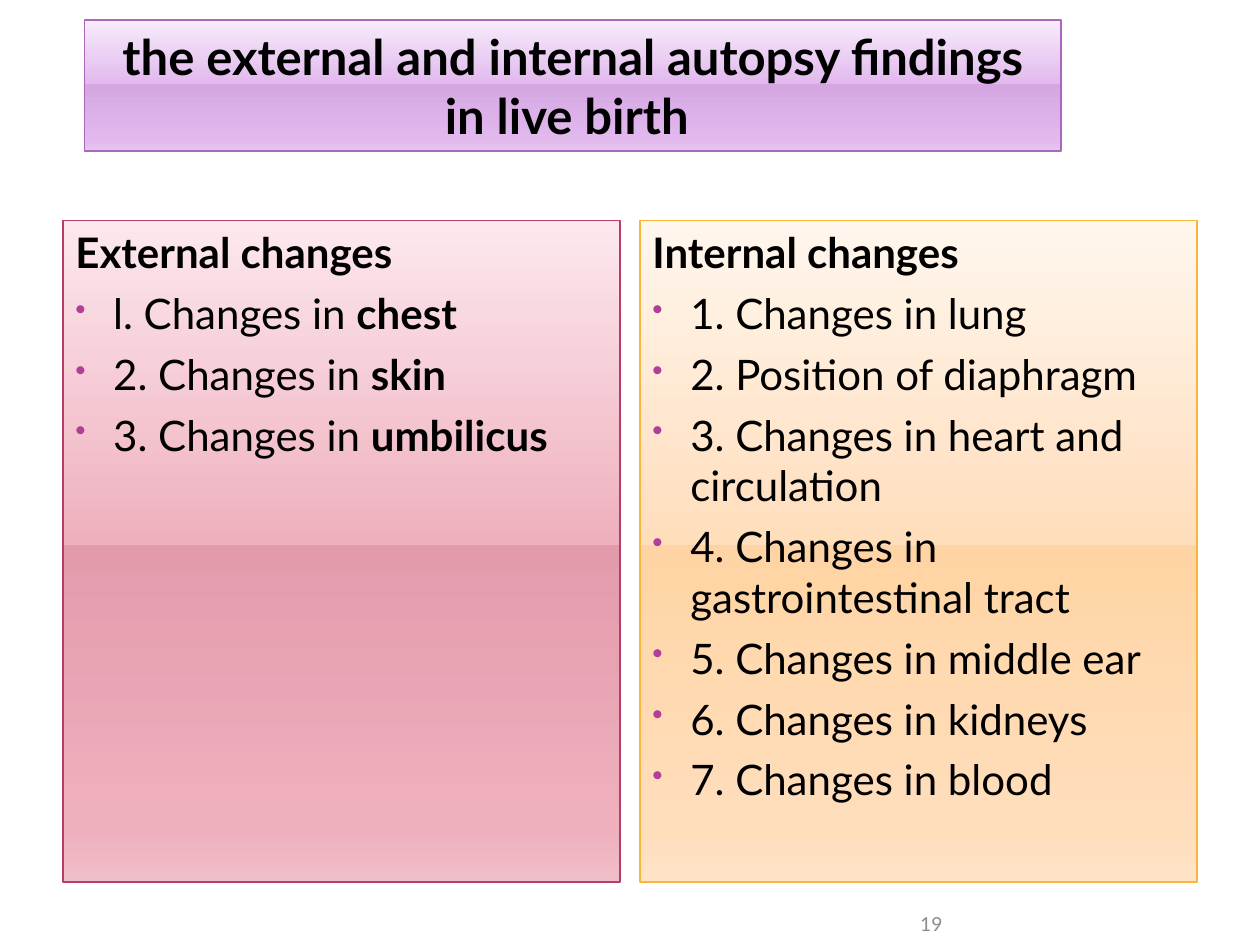
"""Build a slide comparing external and internal autopsy findings in live birth."""
from dataclasses import dataclass

from lxml.etree import SubElement
from pptx import Presentation
from pptx.dml.color import RGBColor
from pptx.enum.shapes import MSO_SHAPE
from pptx.enum.text import MSO_ANCHOR, PP_ALIGN
from pptx.oxml.ns import qn
from pptx.util import Inches, Pt

FONT = "Lato"
STOPS = (0, 49, 49, 92, 100)


@dataclass
class Theme:
    line: str
    top: str
    middle: str
    dark: str
    bottom: str


@dataclass
class Item:
    text: str
    strong: str = ""


@dataclass
class Panel:
    left: float
    heading: str
    theme: Theme
    items: list[Item]


PURPLE = Theme("AC66BB", "F7EBFB", "E2B9ED", "D5A7E2", "E6C6EF")
PINK = Theme("B83D68", "FCE8ED", "EFB0BE", "E39BAC", "F0BEC9")
ORANGE = Theme("F9B639", "FFF6ED", "FFDEBC", "FFD4A4", "FFE3C7")

PANELS = [
    Panel(0.5, "External changes", PINK, [
        Item("l. Changes in ", "chest"),
        Item("2. Changes in ", "skin"),
        Item("3. Changes in ", "umbilicus"),
    ]),
    Panel(5.08, "Internal changes", ORANGE, [
        Item("1. Changes in lung"),
        Item("2. Position of diaphragm"),
        Item("3. Changes in heart and circulation"),
        Item("4. Changes in gastrointestinal tract"),
        Item("5. Changes in middle ear"),
        Item("6. Changes in kidneys"),
        Item("7. Changes in blood"),
    ]),
]


def rgb(color: str) -> RGBColor:
    return RGBColor.from_string(color)


def style(para, size: float, color: str = "000000", align=PP_ALIGN.LEFT) -> None:
    para.alignment = align
    para.font.name = FONT
    para.font.size = Pt(size)
    para.font.color.rgb = rgb(color)


def add_gradient_box(page, left: float, top: float, width: float, height: float, theme: Theme):
    box = page.shapes.add_shape(
        MSO_SHAPE.RECTANGLE, Inches(left), Inches(top), Inches(width), Inches(height))
    box.shadow.inherit = False
    box.line.color.rgb = rgb(theme.line)
    box.line.width = Pt(0.9)
    box.fill.gradient()
    box.fill.gradient_angle = 270
    stop_list = next(box.element.iter(qn("a:gsLst")))
    for stop in list(stop_list):
        stop_list.remove(stop)
    colors = (theme.top, theme.middle, theme.dark, theme.middle, theme.bottom)
    for position, color in zip(STOPS, colors):
        stop = SubElement(stop_list, qn("a:gs"), pos=str(position * 1000))
        SubElement(stop, qn("a:srgbClr"), val=color)
    box.text_frame.word_wrap = True
    box.text_frame.vertical_anchor = MSO_ANCHOR.TOP
    return box


def add_bullet(para) -> None:
    properties = para._p.get_or_add_pPr()
    properties.set("marL", str(Inches(0.3)))
    properties.set("indent", str(Inches(-0.3)))
    color = SubElement(properties, qn("a:buClr"))
    SubElement(color, qn("a:srgbClr"), val="B13F9A")
    SubElement(properties, qn("a:buSzPct"), val="73000")
    SubElement(properties, qn("a:buChar"), char="•")


def add_span(para, text: str, bold: bool) -> None:
    span = para.add_run()
    span.text = text
    span.font.bold = bold


def add_panel(page, panel: Panel) -> None:
    frame = add_gradient_box(page, panel.left, 1.75, 4.42, 5.25, panel.theme).text_frame
    heading = frame.paragraphs[0]
    add_span(heading, panel.heading, True)
    style(heading, 24)
    for item in panel.items:
        para = frame.add_paragraph()
        add_bullet(para)
        para.space_before = Pt(6)
        add_span(para, item.text, False)
        if item.strong:
            add_span(para, item.strong, True)
        style(para, 24)


def add_title(page) -> None:
    box = add_gradient_box(page, 0.67, 0.16, 7.75, 1.04, PURPLE)
    para = box.text_frame.paragraphs[0]
    add_span(para, "the external and internal autopsy findings in live birth ", True)
    style(para, 28, align=PP_ALIGN.CENTER)


def add_page_number(page) -> None:
    box = page.shapes.add_textbox(Inches(6.84), Inches(7.17), Inches(0.64), Inches(0.25))
    frame = box.text_frame
    frame.word_wrap = True
    frame.vertical_anchor = MSO_ANCHOR.BOTTOM
    frame.margin_left = frame.margin_right = frame.margin_top = frame.margin_bottom = 0
    para = frame.paragraphs[0]
    para.text = "19"
    style(para, 11, "8C8C8C", PP_ALIGN.RIGHT)


def main() -> None:
    deck = Presentation()
    deck.slide_width, deck.slide_height = Inches(10), Inches(7.5)
    page = deck.slides.add_slide(deck.slide_layouts[6])
    add_title(page)
    for panel in PANELS:
        add_panel(page, panel)
    add_page_number(page)
    deck.save("out.pptx")


if __name__ == "__main__":
    main()
